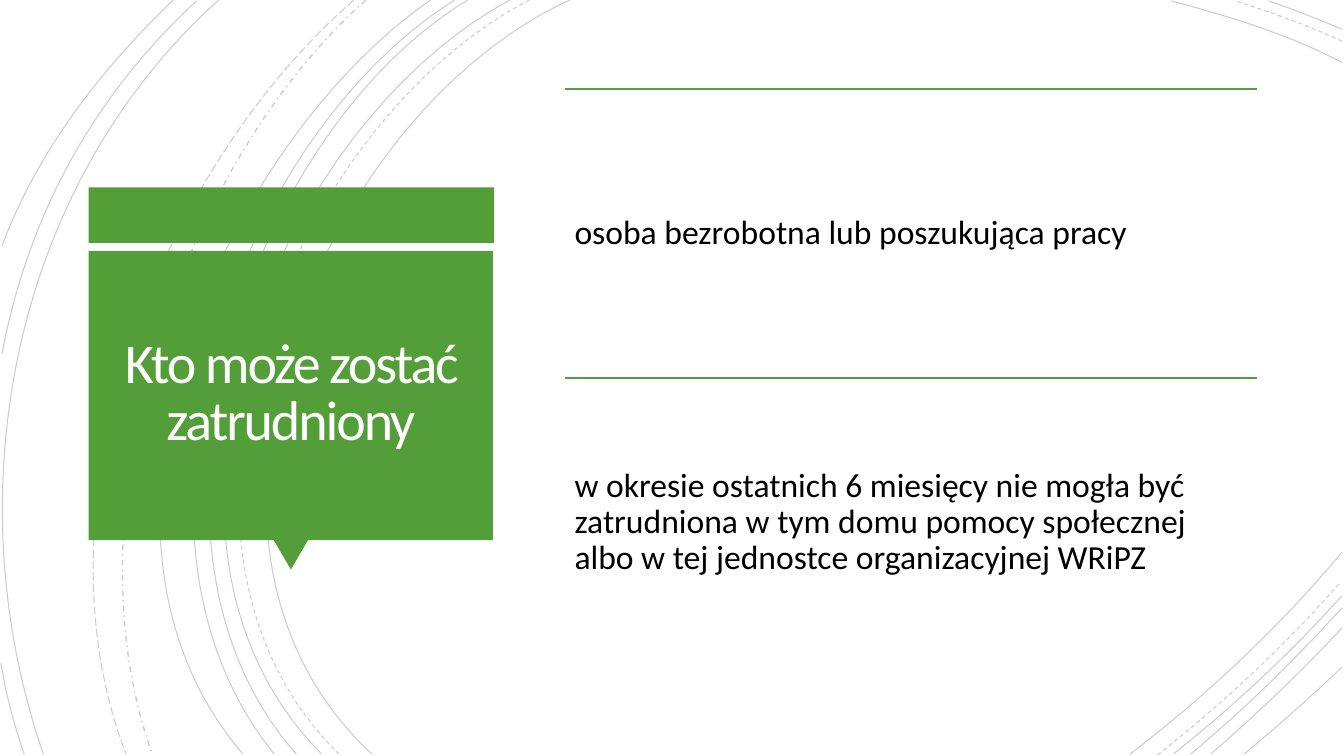
from lxml import etree
from pptx import Presentation
from pptx.dml.color import RGBColor
from pptx.enum import dml, shapes, text
from pptx.oxml.ns import qn
from pptx.util import Inches, Pt

GREEN = RGBColor(0x54, 0x9E, 0x39)
BLACK = RGBColor(0x00, 0x00, 0x00)
TITLE_WHITE = RGBColor(0xFF, 0xFE, 0xFF)
FONT = "Calibri"

SOLID = dml.MSO_LINE.SOLID
DASH = dml.MSO_LINE.DASH
DASH_DOT = dml.MSO_LINE.DASH_DOT
LONG_DASH = dml.MSO_LINE.LONG_DASH

# Start, two control points and end of each cubic arc, then dash and width in points
ARCS = [
    ((5.65, 0), (3.15, 1.15), (1.43, 5.4), (3.69, 7.48), SOLID, 0.75),
    ((13.31, 0.62), (12.78, 0.34), (12.18, 0.16), (11.62, 0.01), SOLID, 0.75),
    ((11.21, 7.48), (11.97, 6.9), (12.69, 6.22), (13.31, 5.48), SOLID, 0.75),
    ((5.25, 0), (2.85, 1.25), (1.23, 5.37), (3.36, 7.48), DASH, 0.75),
    ((13.31, 0.41), (12.97, 0.25), (12.6, 0.12), (12.25, 0.01), DASH, 0.75),
    ((11.48, 7.49), (12.13, 6.98), (12.75, 6.4), (13.3, 5.77), DASH, 0.75),
    ((5.06, 0), (2.7, 1.27), (1.1, 5.37), (3.19, 7.48), SOLID, 0.75),
    ((13.31, 0.29), (13.07, 0.19), (12.83, 0.09), (12.58, 0.01), SOLID, 0.75),
    ((11.64, 7.48), (12.23, 7.01), (12.8, 6.48), (13.31, 5.91), SOLID, 0.75),
    ((4.64, 0), (2.44, 1.33), (1.1, 5.41), (2.94, 7.48), SOLID, 0.75),
    ((11.81, 7.48), (12.34, 7.04), (12.84, 6.55), (13.31, 6.03), SOLID, 0.75),
    ((4.51, 0), (2.31, 1.38), (0.97, 5.33), (2.72, 7.48), SOLID, 0.75),
    ((12.01, 7.48), (12.46, 7.09), (12.9, 6.67), (13.31, 6.23), SOLID, 0.75),
    ((4.27, 0), (2.17, 1.47), (0.53, 5.29), (2.41, 7.48), SOLID, 0.75),
    ((12.34, 7.48), (12.67, 7.21), (12.99, 6.92), (13.31, 6.62), SOLID, 0.75),
    ((3.63, 0), (1.76, 1.66), (0.65, 5.09), (1.51, 7.48), DASH_DOT, 1),
    ((3.51, 0), (1.57, 1.69), (0.29, 4.99), (1.25, 7.48), LONG_DASH, 0.75),
    ((2.17, 0), (0.11, 1.85), (-0.46, 4.9), (0.43, 7.48), SOLID, 0.75),
    ((1.95, 0.01), (0.92, 0.96), (0.28, 2.14), (0.02, 3.51), SOLID, 0.75),
    ((0.01, 6.58), (0.06, 6.89), (0.14, 7.19), (0.24, 7.48), SOLID, 0.75),
    ((1.72, 0), (1, 0.69), (0.37, 1.5), (0.02, 2.44), SOLID, 0.75),
]


def add_arc(slide, points):
    """Add a freeform whose four points define one cubic curve."""
    start, *rest = [tuple(map(Inches, point)) for point in points]
    builder = slide.shapes.build_freeform(*start)
    builder.add_line_segments(rest, close=False)
    sp = builder.convert_to_shape()
    outline = sp._element.spPr.find(".//" + qn("a:path"))
    curve = etree.SubElement(outline, qn("a:cubicBezTo"))
    for segment in outline.findall(qn("a:lnTo")):
        curve.append(segment[0])
        outline.remove(segment)
    return sp


def add_text(slide, box, words, size, color, align, spacing, inset):
    """Add a vertically centred text box and return its run."""
    tf = slide.shapes.add_textbox(*map(Inches, box)).text_frame
    tf.word_wrap = True
    tf.vertical_anchor = text.MSO_ANCHOR.MIDDLE
    tf.margin_left = tf.margin_right = Inches(inset)
    tf.margin_top = tf.margin_bottom = Inches(inset)
    p = tf.paragraphs[0]
    p.alignment = align
    p.line_spacing = spacing
    r = p.add_run()
    r.text = words
    r.font.name = FONT
    r.font.size = Pt(size)
    r.font.color.rgb = color
    return r


prs = Presentation()
prs.slide_width = Inches(13.33)
prs.slide_height = Inches(7.5)
s = prs.slides.add_slide(prs.slide_layouts[6])

# Background arcs
for *points, dash, width in ARCS:
    sp = add_arc(s, points)
    sp.shadow.inherit = False
    sp.fill.background()
    sp.line.color.rgb = BLACK
    sp.line.width = Pt(width)
    sp.line.dash_style = dash
    line_color = sp._element.spPr.find(".//" + qn("a:srgbClr"))
    etree.SubElement(line_color, qn("a:alpha")).set("val", "20000")

# Title callout
RECT = shapes.MSO_SHAPE.RECTANGLE
TRIANGLE = shapes.MSO_SHAPE.ISOSCELES_TRIANGLE
for preset, box, rotation in [
    (RECT, (0.88, 1.86, 4.02, 0.55), 0),
    (TRIANGLE, (2.71, 5.35, 0.35, 0.3), 180),
    (RECT, (0.88, 2.49, 4.01, 2.87), 0),
]:
    sp = s.shapes.add_shape(preset, *map(Inches, box))
    sp.rotation = rotation
    sp.shadow.inherit = False
    sp.fill.solid()
    sp.fill.fore_color.rgb = GREEN
    sp.line.fill.background()

r = add_text(s, (0.97, 2.57, 3.83, 2.69), "Kto może zostać zatrudniony",
             40, TITLE_WHITE, text.PP_ALIGN.CENTER, 0.85, 0.25)
r._r.get_or_add_rPr().set("spc", "-150")

# Conditions, each under a rule
LEFT, TOP, WIDTH, HEIGHT = 5.6, 0.88, 6.87, 2.87
CONDITIONS = [
    ("osoba bezrobotna lub poszukująca pracy", text.PP_ALIGN.JUSTIFY),
    ("w okresie ostatnich 6 miesięcy nie mogła być zatrudniona w tym domu "
     "pomocy społecznej albo w tej jednostce organizacyjnej WRiPZ",
     text.PP_ALIGN.LEFT),
]
for i, (words, align) in enumerate(CONDITIONS):
    y = TOP + i * HEIGHT
    rule = s.shapes.add_connector(shapes.MSO_CONNECTOR.STRAIGHT, Inches(LEFT), Inches(y),
                                  Inches(LEFT + WIDTH), Inches(y))
    rule.line.color.rgb = GREEN
    rule.line.width = Pt(1.25)
    etree.SubElement(rule._element.spPr, qn("a:effectLst"))
    add_text(s, (LEFT, y, WIDTH, HEIGHT), words, 24, BLACK, align, 0.9, 0.1)

prs.save("out.pptx")
